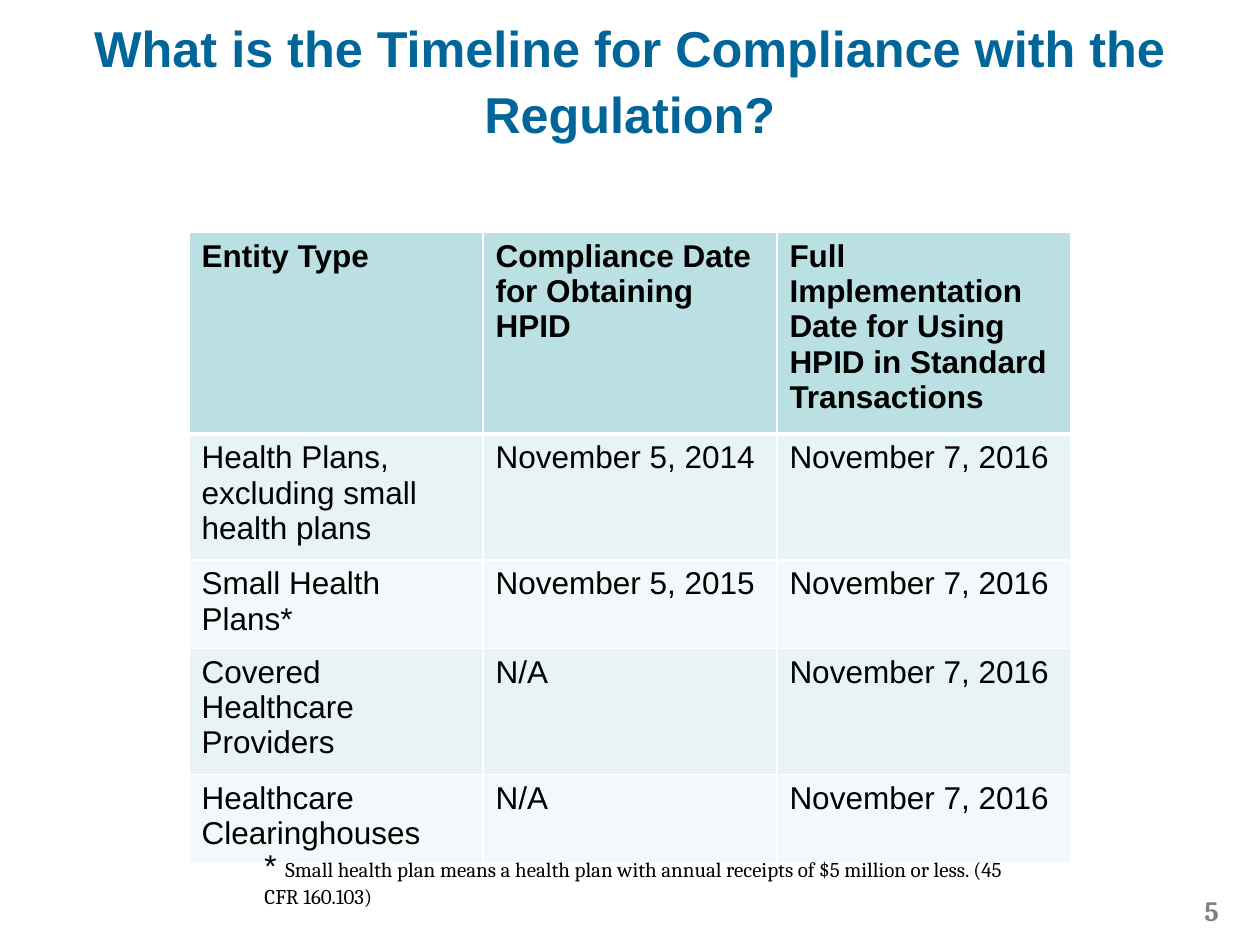
from pptx import Presentation
from pptx.dml.color import RGBColor
from pptx.enum.text import MSO_ANCHOR, PP_ALIGN
from pptx.oxml import parse_xml
from pptx.oxml.ns import nsdecls
from pptx.util import Pt

CENTER, RIGHT, LEFT = PP_ALIGN.CENTER, PP_ALIGN.RIGHT, PP_ALIGN.LEFT
TOP, MIDDLE, BOTTOM = MSO_ANCHOR.TOP, MSO_ANCHOR.MIDDLE, MSO_ANCHOR.BOTTOM

BLACK, WHITE = "000000", "FFFFFF"
HEADER_FILL = "BBE0E3"
BAND_FILLS = ("E7F3F4", "F3F9FA")

TIMELINE = [
    ("Entity Type", "Compliance Date for Obtaining HPID",
     "Full Implementation Date for Using HPID in Standard Transactions"),
    ("Health Plans, excluding small health plans", "November 5, 2014", "November 7, 2016"),
    ("Small Health Plans*", "November 5, 2015", "November 7, 2016"),
    ("Covered Healthcare Providers", "N/A", "November 7, 2016"),
    ("Healthcare Clearinghouses", "N/A", "November 7, 2016"),
]
ROW_HEIGHTS = (110.2, 68.5, 48, 68, 48)


def color(hex_value):
    return RGBColor.from_string(hex_value)


def style_run(run, size, font="Arial", hex_value=BLACK, bold=False):
    run.font.size = Pt(size)
    run.font.name = font
    run.font.bold = bold
    run.font.color.rgb = color(hex_value)


def add_text(slide, left, top, width, height, pieces, align=LEFT, anchor=TOP):
    """Each piece is its text and the style of its run."""
    frame = slide.shapes.add_textbox(Pt(left), Pt(top), Pt(width), Pt(height)).text_frame
    frame.word_wrap = True
    frame.vertical_anchor = anchor
    paragraph = frame.paragraphs[0]
    paragraph.alignment = align
    for text, style in pieces:
        run = paragraph.add_run()
        run.text = text
        style_run(run, **style)
    return frame


def set_borders(cell, bottom_width):
    properties = cell._tc.get_or_add_tcPr()
    sides = (("lnL", 1), ("lnR", 1), ("lnT", 1), ("lnB", bottom_width))
    for position, (side, width) in enumerate(sides):
        properties.insert(position, parse_xml(
            f'<a:{side} {nsdecls("a")} w="{Pt(width)}"><a:solidFill>'
            f'<a:srgbClr val="{WHITE}"/></a:solidFill></a:{side}>'))


def add_timeline(slide, left, top, width):
    table = slide.shapes.add_table(
        len(TIMELINE), len(TIMELINE[0]), Pt(left), Pt(top),
        Pt(width), Pt(sum(ROW_HEIGHTS))).table
    for column in table.columns:
        column.width = Pt(width / len(TIMELINE[0]))
    for r, (entries, height) in enumerate(zip(TIMELINE, ROW_HEIGHTS)):
        table.rows[r].height = Pt(height)
        is_header = r == 0
        for c, entry in enumerate(entries):
            cell = table.cell(r, c)
            cell.text_frame.text = entry
            style_run(cell.text_frame.paragraphs[0].runs[0], 18, bold=is_header)
            cell.fill.solid()
            cell.fill.fore_color.rgb = color(HEADER_FILL if is_header else BAND_FILLS[(r - 1) % 2])
            set_borders(cell, 3 if is_header else 1)


def main():
    deck = Presentation()
    deck.slide_width, deck.slide_height = Pt(720), Pt(540)
    slide = deck.slides.add_slide(deck.slide_layouts[6])

    # Title, sitting high in its box
    title = add_text(slide, 36, 12, 648, 99,
                     [("What is the Timeline for Compliance with the Regulation?",
                       dict(size=28.8, hex_value="006699", bold=True))], CENTER, MIDDLE)
    title.margin_top, title.margin_bottom = Pt(0), Pt(34)
    title.paragraphs[0].line_spacing = 1.08

    # Compliance dates
    add_timeline(slide, 108, 132.8, 504)

    # Page number
    page = add_text(slide, 672, 502.5, 41.5, 31,
                    [("5", dict(size=16, font="Cambria", hex_value="808080", bold=True))],
                    RIGHT, BOTTOM)
    page.margin_right = Pt(17)

    # Footnote
    add_text(slide, 144, 480, 450, 44, [
        ("* ", dict(size=18)),
        ("Small health plan means a health plan with annual receipts of "
         "$5 million or less. (45 CFR 160.103)", dict(size=12, font="Cambria")),
    ])

    deck.save("out.pptx")


if __name__ == "__main__":
    main()
